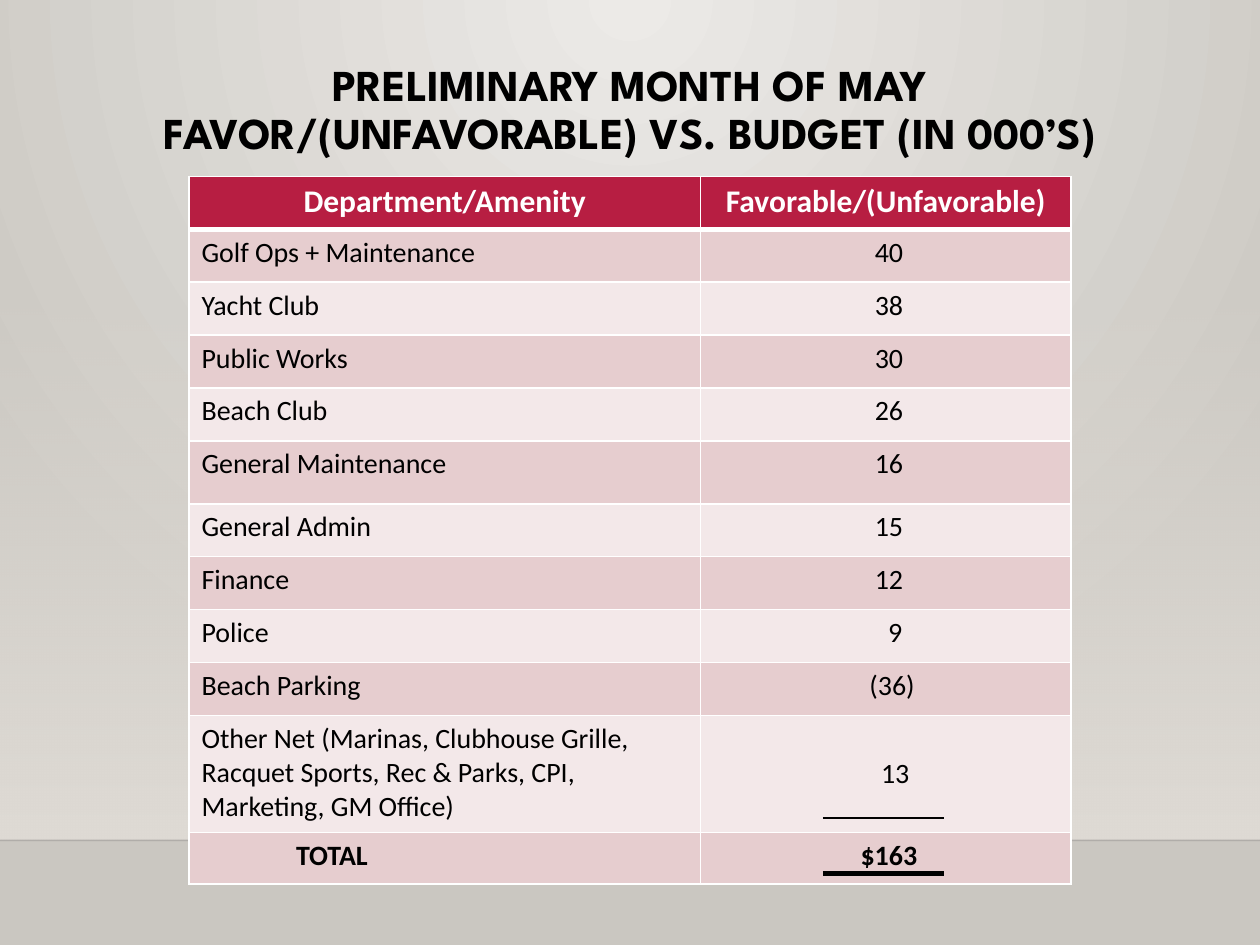
from dataclasses import dataclass

from lxml.etree import SubElement
from pptx import Presentation
from pptx.dml.color import RGBColor as Rgb
from pptx.enum.shapes import MSO_CONNECTOR as Connector, MSO_SHAPE as Shape
from pptx.enum.text import MSO_ANCHOR as Anchor, PP_ALIGN as Align
from pptx.oxml.ns import qn
from pptx.util import Inches, Pt


@dataclass(frozen=True)
class Theme:
    glow: str = "ECEAE7"
    backdrop: str = "CAC7C1"
    wall: str = "DFDBD5"
    floor_line: str = "000001"
    ink: str = "000000"
    white: str = "FFFFFF"
    header: str = "B71E42"
    bands: tuple = ("E6CDCF", "F3E8E9")
    title_font: str = "League Spartan"
    body_font: str = "Calibri"
    title_size: float = 25.2
    header_size: float = 18
    body_size: float = 16


THEME = Theme()
WIDTH, HEIGHT = 10, 7.5
FLOOR = 6.67

TITLE = "PRELIMINARY MONTH OF MAY\vFAVOR/(UNFAVORABLE) VS. BUDGET (IN 000’S)"
HEADINGS = ("Department/Amenity", "Favorable/(Unfavorable)")
# Department, variance, indent of the variance in inches
VARIANCES = [
    ("Golf Ops + Maintenance", "40", 0.05),
    ("Yacht Club", "38", 0.05),
    ("Public Works", "30", 0.05),
    ("Beach Club", "26", 0.05),
    ("General Maintenance", "16", 0.05),
    ("General Admin", "15", 0.05),
    ("Finance", "12", 0.05),
    ("Police", "9", 0.15),
    ("Beach Parking", "(36)", 0.1),
    ("Other Net (Marinas, Clubhouse Grille, Racquet Sports, Rec & Parks, CPI, "
     "Marketing, GM Office)", "13", 0.15),
]
TOTAL = ("TOTAL", "$163")
ROW, TALL_ROW, OTHER_ROW, TOTAL_ROW = 0.42, 0.5, 0.93, 0.41
ROW_HEIGHTS = [ROW] * 5 + [TALL_ROW] + [ROW] * 4 + [OTHER_ROW, TOTAL_ROW]
COLUMN_SHARES = (0.58, 0.42)


def add_color(parent, color, alpha=100):
    node = SubElement(parent, qn("a:srgbClr"), val=color)
    if alpha < 100:
        SubElement(node, qn("a:alpha"), val=str(alpha * 1000))


def set_gradient(fill, owner, stops, focus=None):
    """Fill with (position, color, alpha) stops, downward or around a focus."""
    fill.gradient()
    gradient = next(owner.iter(qn("a:gradFill")))
    for child in list(gradient):
        gradient.remove(child)
    stop_list = SubElement(gradient, qn("a:gsLst"))
    for position, color, alpha in stops:
        stop = SubElement(stop_list, qn("a:gs"), pos=str(position * 1000))
        add_color(stop, color, alpha)
    if focus:
        circle = SubElement(gradient, qn("a:path"), path="circle")
        sides = {side: str(share * 1000) for side, share in zip("ltrb", focus)}
        SubElement(circle, qn("a:fillToRect"), **sides)
    else:
        SubElement(gradient, qn("a:lin"), ang="5400000", scaled="0")


def style_text(para, font, size, color, bold=False, align=Align.LEFT):
    para.alignment = align
    for span in para.runs:
        span.font.name, span.font.size = font, Pt(size)
        span.font.bold = bold
        span.font.color.rgb = Rgb.from_string(color)


def add_line(page, left, right, top, color, weight, alpha=100):
    line = page.shapes.add_connector(
        Connector.STRAIGHT, Inches(left), Inches(top), Inches(right), Inches(top))
    line.line.width = Pt(weight)
    line.line.color.rgb = Rgb.from_string(color)
    properties = line.element.spPr
    if alpha < 100:
        solid = next(properties.iter(qn("a:srgbClr")))
        SubElement(solid, qn("a:alpha"), val=str(alpha * 1000))
    SubElement(properties, qn("a:effectLst"))


def add_backdrop(page):
    set_gradient(page.background.fill, page.element,
                 [(0, THEME.glow, 100), (100, THEME.backdrop, 100)],
                 focus=(43, 0, 43, 100))
    # Wall that fades in down to the floor line
    top = 2.2
    wall = page.shapes.add_shape(
        Shape.RECTANGLE, 0, Inches(top), Inches(WIDTH), Inches(FLOOR - top))
    wall.shadow.inherit = False
    wall.line.fill.background()
    set_gradient(wall.fill, wall.element,
                 [(0, THEME.wall, 0), (100, THEME.wall, 100)])
    add_line(page, 0, WIDTH, FLOOR, THEME.floor_line, 1, alpha=20)


def add_title(page, left, top, width, height):
    box = page.shapes.add_textbox(*map(Inches, (left, top, width, height)))
    frame = box.text_frame
    frame.word_wrap = True
    frame.vertical_anchor = Anchor.MIDDLE
    frame.margin_top = Inches(0.33)
    frame.text = TITLE
    para = frame.paragraphs[0]
    para.line_spacing = 0.9
    style_text(para, THEME.title_font, THEME.title_size, THEME.ink, True, Align.CENTER)


def set_borders(cell, bottom=1.0, top=1.0):
    """Put the borders ahead of the cell's fill, as the schema asks."""
    properties = cell._tc.get_or_add_tcPr()
    weights = {"a:lnL": 1, "a:lnR": 1, "a:lnT": top, "a:lnB": bottom}
    for index, (tag, weight) in enumerate(weights.items()):
        border = SubElement(properties, qn(tag), w=str(Pt(weight)))
        add_color(SubElement(border, qn("a:solidFill")), THEME.white)
        properties.insert(index, border)


def fill_cell(cell, text, fill, size, color, bold, align, indent=0.0):
    cell.text = text
    cell.margin_left = Inches(0.1 + indent)
    cell.fill.solid()
    cell.fill.fore_color.rgb = Rgb.from_string(fill)
    style_text(cell.text_frame.paragraphs[0], THEME.body_font, size, color, bold, align)


def add_variance_table(page, left, top, width):
    rows = len(ROW_HEIGHTS)
    table = page.shapes.add_table(
        rows, 2, Inches(left), Inches(top), Inches(width),
        Inches(sum(ROW_HEIGHTS))).table
    table.first_row = table.horz_banding = False
    for column, share in zip(table.columns, COLUMN_SHARES):
        column.width = Inches(width * share)
    for row, height in zip(table.rows, ROW_HEIGHTS):
        row.height = Inches(height)

    # Header
    for column, heading in enumerate(HEADINGS):
        fill_cell(table.cell(0, column), heading, THEME.header,
                  THEME.header_size, THEME.white, True, Align.CENTER)

    # Departments, then the total
    lines = [(name, value, 0, indent, False) for name, value, indent in VARIANCES]
    lines.append((*TOTAL, 0.75, 0.05, True))
    for row, (name, value, name_indent, value_indent, bold) in enumerate(lines, 1):
        band = THEME.bands[(row - 1) % 2]
        parts = ((name, Align.LEFT, name_indent), (value, Align.CENTER, value_indent))
        for column, (text, align, indent) in enumerate(parts):
            fill_cell(table.cell(row, column), text, band,
                      THEME.body_size, THEME.ink, bold, align, indent)
    table.cell(rows - 2, 1).vertical_anchor = Anchor.MIDDLE

    for row in range(rows):
        for column in range(2):
            set_borders(table.cell(row, column), bottom=3 if row == 0 else 1,
                        top=3 if row == 1 else 1)

    # Rules under the last variance and the total
    bottom = top + sum(ROW_HEIGHTS)
    rule_left, rule_right = left + 5.03, left + 5.99
    add_line(page, rule_left, rule_right, bottom - 0.09, THEME.ink, 3)
    add_line(page, rule_left, rule_right, bottom - 0.53, THEME.ink, 1.25)


def main():
    deck = Presentation()
    deck.slide_width, deck.slide_height = Inches(WIDTH), Inches(HEIGHT)
    page = deck.slides.add_slide(deck.slide_layouts[6])
    add_backdrop(page)
    add_title(page, 0.09 * WIDTH, 0.07, 0.82 * WIDTH, 1.34)
    add_variance_table(page, 0.15 * WIDTH, 1.4, 0.7 * WIDTH)
    deck.save("out.pptx")


if __name__ == "__main__":
    main()
